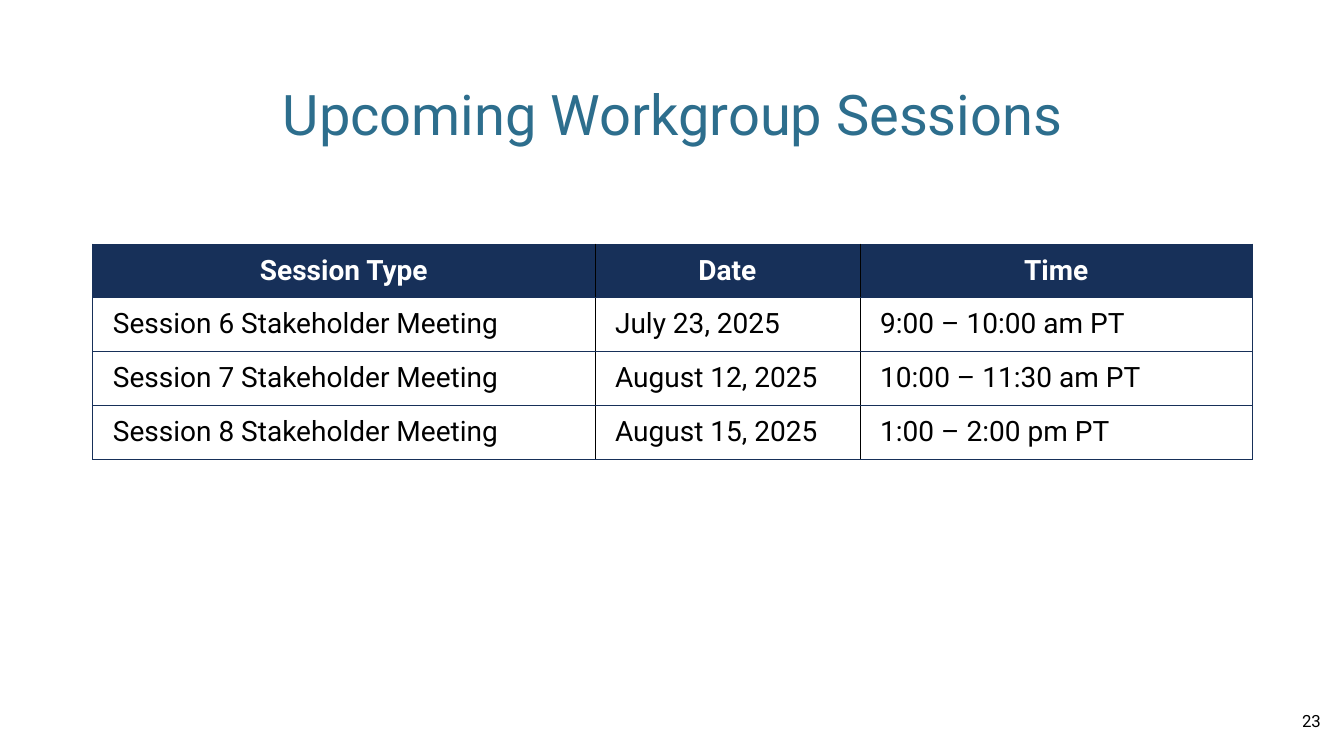
from lxml import etree
from pptx import Presentation
from pptx import util as u
from pptx.dml.color import RGBColor
from pptx.enum import text
from pptx.oxml import ns

NAVY = RGBColor(0x17, 0x30, 0x59)
TEAL = RGBColor(0x2D, 0x6E, 0x8D)
BLACK = RGBColor(0, 0, 0)
WHITE = RGBColor(255, 255, 255)

FONT = "Roboto"
WIDTH, HEIGHT = 13.33, 7.5
MARGIN = 0.92
COLUMNS = [4.98, 2.63, 3.89]
ROW_HEIGHT = 0.53
SESSIONS = [
    ["Session Type", "Date", "Time"],
    ["Session 6 Stakeholder Meeting", "July 23, 2025", "9:00 – 10:00 am PT"],
    ["Session 7 Stakeholder Meeting", "August 12, 2025", "10:00 – 11:30 am PT"],
    ["Session 8 Stakeholder Meeting", "August 15, 2025", "1:00 – 2:00 pm PT"],
]


def set_all(target, values):
    for name, value in values.items():
        setattr(target, name, value)


def write(frame, words, align, color, size, bold=False):
    para = frame.paragraphs[0]
    para.alignment = align
    span = para.add_run()
    span.text = words
    set_all(span.font, {"name": FONT, "size": u.Pt(size), "bold": bold})
    span.font.color.rgb = color


def add_label(page, place, words, align, color, size):
    box = page.shapes.add_textbox(*map(u.Inches, place))
    set_all(box.text_frame, {"word_wrap": True,
                             "vertical_anchor": text.MSO_ANCHOR.MIDDLE})
    write(box.text_frame, words, align, color, size)


def add_borders(cell, colors):
    """Draw half-point borders; colors maps L, R, T, B in that order."""
    properties = cell._tc.get_or_add_tcPr()
    for side, color in colors.items():
        line = etree.SubElement(properties, ns.qn(f"a:ln{side}"), w=str(u.Pt(0.5)))
        fill = etree.SubElement(line, ns.qn("a:solidFill"))
        etree.SubElement(fill, ns.qn("a:srgbClr"), val=str(color))


def add_sessions(page, left, top):
    last = len(COLUMNS) - 1
    place = (left, top, sum(COLUMNS), ROW_HEIGHT * len(SESSIONS))
    table = page.shapes.add_table(len(SESSIONS), len(COLUMNS),
                                  *map(u.Inches, place)).table
    table.horz_banding = False
    for column, width in zip(table.columns, COLUMNS):
        column.width = u.Inches(width)
    for r, session in enumerate(SESSIONS):
        for c, words in enumerate(session):
            cell = table.cell(r, c)
            set_all(cell, {"margin_left": u.Inches(0.2), "margin_right": u.Inches(0.2),
                           "margin_top": u.Inches(0.1), "margin_bottom": u.Inches(0.1)})
            add_borders(cell, {"L": BLACK if c > 0 else NAVY,
                               "R": BLACK if c < last else NAVY,
                               "T": NAVY, "B": NAVY})
            if r == 0:
                cell.fill.solid()
                cell.fill.fore_color.rgb = NAVY
                write(cell.text_frame, words, text.PP_ALIGN.CENTER, WHITE, 20, True)
            else:
                cell.fill.background()
                write(cell.text_frame, words, text.PP_ALIGN.LEFT, BLACK, 20)


def main():
    deck = Presentation()
    set_all(deck, {"slide_width": u.Inches(WIDTH), "slide_height": u.Inches(HEIGHT)})
    page = deck.slides.add_slide(deck.slide_layouts[6])
    add_label(page, (MARGIN, 0.4, sum(COLUMNS), 1.45), "Upcoming Workgroup Sessions",
              text.PP_ALIGN.CENTER, TEAL, 40)
    add_sessions(page, MARGIN, 2.42)
    add_label(page, (10.2, 6.95, 3, 0.4), "23", text.PP_ALIGN.RIGHT, BLACK, 12)
    deck.save("out.pptx")


if __name__ == "__main__":
    main()
